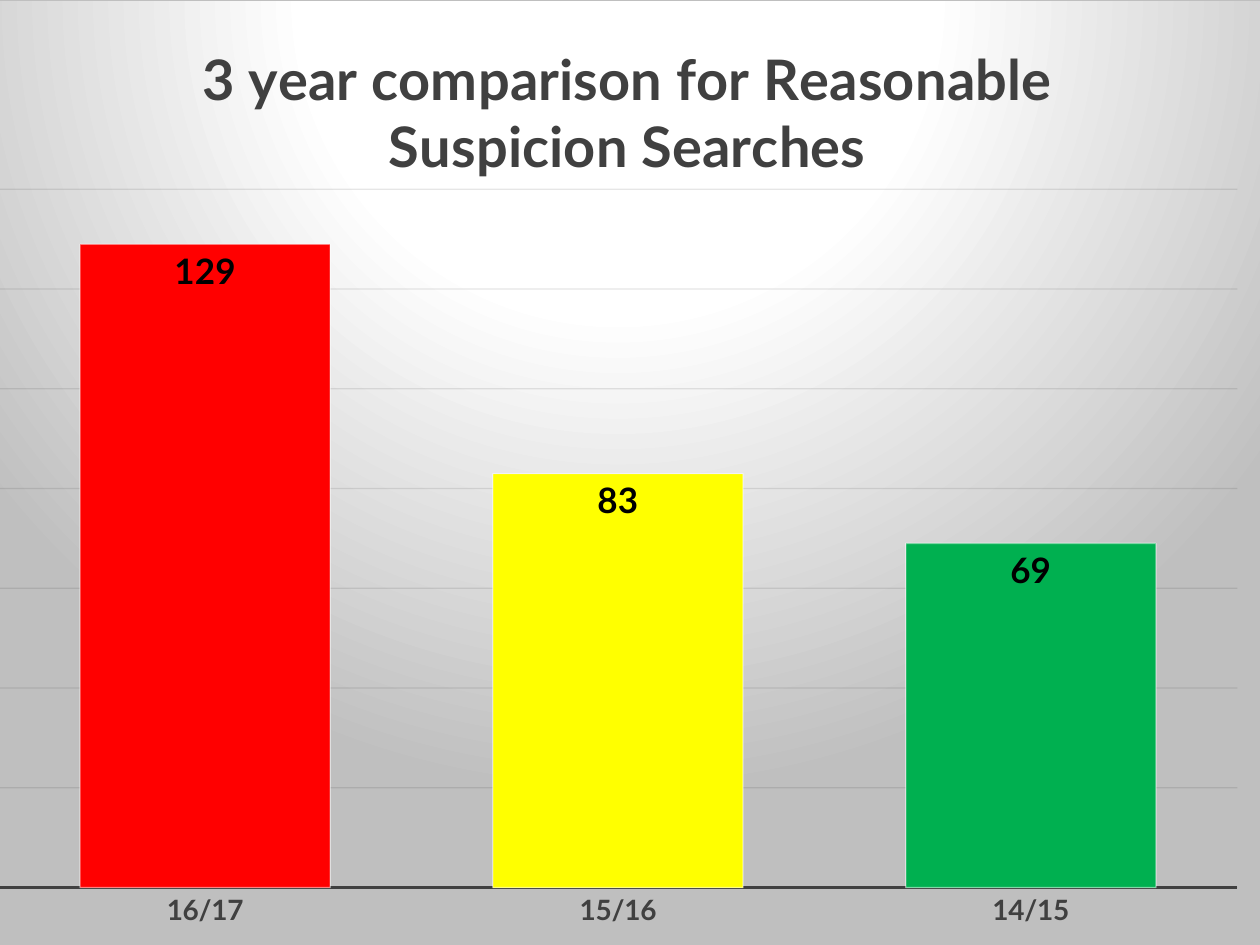
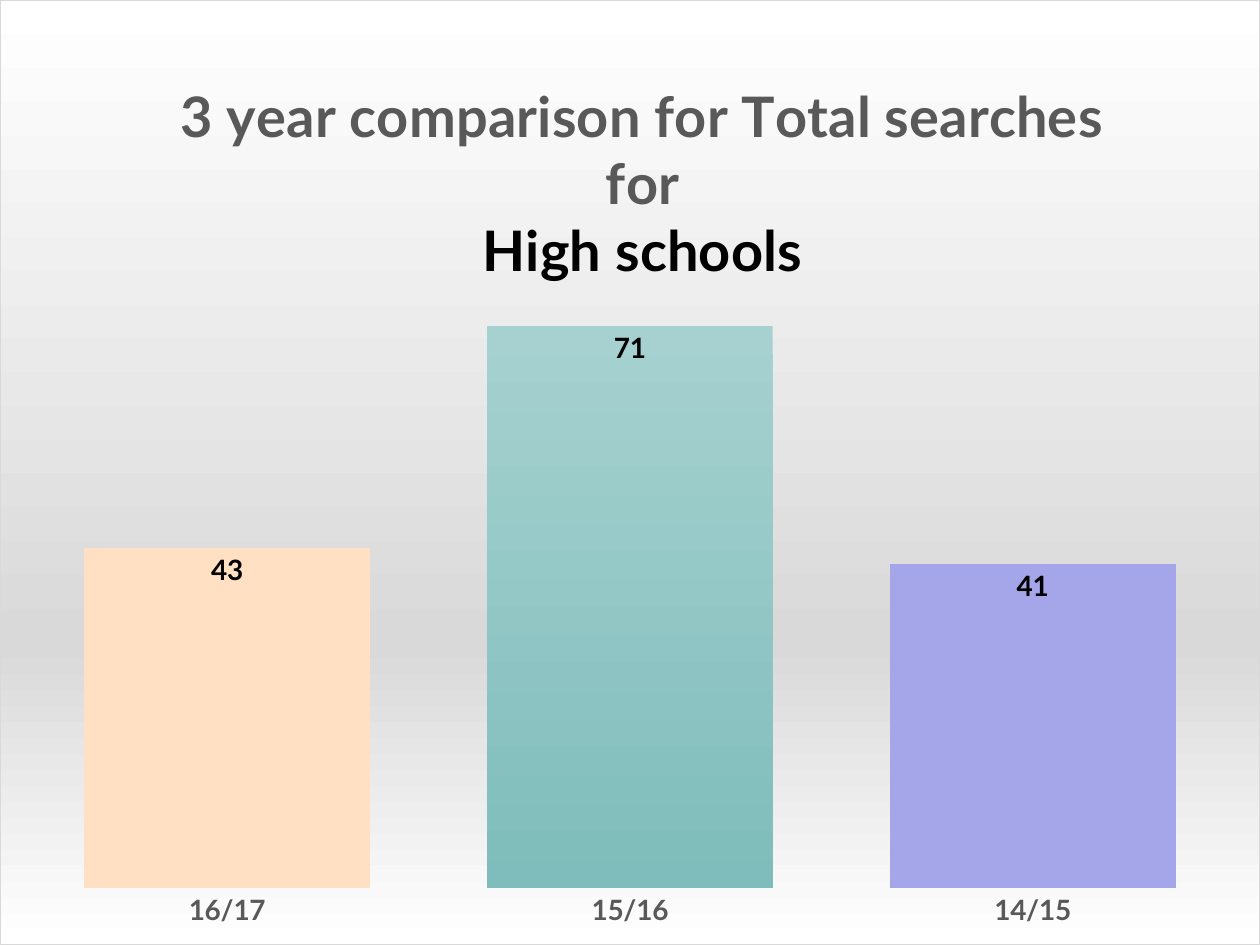
import pptx
import pptx.chart.data
import pptx.dml.color
import pptx.enum.chart
import pptx.oxml
import pptx.oxml.ns
import pptx.util

RGBColor = pptx.dml.color.RGBColor
Inches = pptx.util.Inches
Pt = pptx.util.Pt

FONT = "Lato"
BLACK = RGBColor(0x00, 0x00, 0x00)
WHITE = RGBColor(0xFF, 0xFF, 0xFF)
CHARCOAL = RGBColor(0x40, 0x40, 0x40)
SLATE = RGBColor(0x59, 0x59, 0x59)
SILVER = RGBColor(0xBF, 0xBF, 0xBF)
MIST = RGBColor(0xD9, 0xD9, 0xD9)
GRID_INK = RGBColor(0x0D, 0x0D, 0x0D)
RED = RGBColor(0xFF, 0x00, 0x00)
YELLOW = RGBColor(0xFF, 0xFF, 0x00)
GREEN = RGBColor(0x00, 0xB0, 0x50)
PEACH = RGBColor(0xFF, 0xE0, 0xC2)
TEAL_LIGHT = RGBColor(0xA6, 0xD1, 0xD0)
TEAL_DARK = RGBColor(0x7E, 0xBD, 0xBB)
LAVENDER = RGBColor(0xA5, 0xA5, 0xE9)

YEARS = ("16/17", "15/16", "14/15")
TITLE_SIZE = 32
SPOTLIGHT = ('<a:path path="circle"><a:fillToRect l="50000" t="-80000" '
             'r="50000" b="180000"/></a:path>')
DOWNWARD = '<a:lin ang="5400000" scaled="0"/>'


def style_font(font, size, color, bold=True):
    """Apply the deck typeface with a size, colour and weight."""
    font.name = FONT
    font.size = Pt(size)
    font.bold = bold
    font.color.rgb = color


def add_text(paragraph, text, **style):
    """Append a formatted run to a paragraph."""
    run = paragraph.add_run()
    run.text = text
    style_font(run.font, **style)


def style_line(line, color, width):
    """Give a line a solid colour and a width in points."""
    line.color.rgb = color
    line.width = Pt(width)


def set_opacity(chart, colors_path, percent):
    """Set the opacity of every colour found in the chart."""
    for color in chart.element.xpath(colors_path):
        alpha = pptx.oxml.parse_xml(
            f'<a:alpha {pptx.oxml.ns.nsdecls("a")} val="{percent * 1000}"/>')
        color.append(alpha)


def manual_layout(x, y, width=None, height=None):
    """Return a layout element in fractions of the chart."""
    target = '<c:layoutTarget val="inner"/>' if width else ""
    extent = f'<c:w val="{width}"/><c:h val="{height}"/>' if width else ""
    return pptx.oxml.parse_xml(
        f'<c:layout {pptx.oxml.ns.nsdecls("c")}><c:manualLayout>{target}'
        '<c:xMode val="edge"/><c:yMode val="edge"/>'
        f'<c:x val="{x}"/><c:y val="{y}"/>{extent}'
        '</c:manualLayout></c:layout>')


def fill_backdrop(chart, stops, direction, border):
    """Fill the chart area with a gradient inside a thin border."""
    marks = "".join(f'<a:gs pos="{position * 1000}"><a:srgbClr val="{color}"/></a:gs>'
                    for position, color in stops)
    backdrop = pptx.oxml.parse_xml(
        f'<c:spPr {pptx.oxml.ns.nsdecls("c", "a")}>'
        f'<a:gradFill><a:gsLst>{marks}</a:gsLst>{direction}</a:gradFill>'
        f'<a:ln w="{Pt(0.75)}"><a:solidFill><a:srgbClr val="{border}"/>'
        '</a:solidFill></a:ln></c:spPr>')
    chart.element.xpath("./c:txPr")[0].addprevious(backdrop)


def write_title(chart, lines, corner):
    """Write the title lines and place their top left corner."""
    frame = chart.chart_title.text_frame
    for number, (text, color) in enumerate(lines):
        paragraph = frame.add_paragraph() if number else frame.paragraphs[0]
        add_text(paragraph, text, size=TITLE_SIZE, color=color)
    for layout in chart.element.xpath("./c:chart/c:title/c:layout"):
        layout.getparent().remove(layout)
    chart.element.xpath("./c:chart/c:title/c:tx")[0].addnext(manual_layout(*corner))


def color_bars(bars, fills):
    """Fill each bar with one colour, or with a top and bottom pair."""
    for number, colors in enumerate(fills):
        fill = bars.points[number].format.fill
        if isinstance(colors, RGBColor):
            fill.solid()
            fill.fore_color.rgb = colors
        else:
            fill.gradient()
            fill.gradient_angle = 270
            for stop, color in zip(fill.gradient_stops, colors):
                stop.color.rgb = color


def add_year_chart(slide, box, counts, fills, gap, top_value, plot_box,
                   label_size, year_color):
    """Add a column chart of yearly counts in the given box."""
    yearly = pptx.chart.data.CategoryChartData()
    yearly.categories = YEARS
    yearly.add_series("Series 1", counts)
    chart = slide.shapes.add_chart(
        pptx.enum.chart.XL_CHART_TYPE.COLUMN_CLUSTERED,
        *(Inches(length) for length in box), yearly).chart
    style_font(chart.font, 10, BLACK, bold=False)
    chart.has_legend = False

    columns = chart.plots[0]
    columns.gap_width = gap
    columns.vary_by_categories = False
    columns.has_data_labels = True
    columns.data_labels.show_value = True
    columns.data_labels.position = pptx.enum.chart.XL_LABEL_POSITION.INSIDE_END
    style_font(columns.data_labels.font, label_size, BLACK)
    color_bars(columns.series[0], fills)

    years = chart.category_axis
    years.major_tick_mark = pptx.enum.chart.XL_TICK_MARK.NONE
    years.format.line.fill.background()
    style_font(years.tick_labels.font, 16, year_color)
    scale = chart.value_axis
    scale.minimum_scale = 0
    scale.maximum_scale = top_value
    scale.major_unit = 20
    scale.has_major_gridlines = False
    scale.visible = False

    plot_area = chart.element.xpath("./c:chart/c:plotArea")[0]
    for layout in plot_area.xpath("./c:layout"):
        plot_area.remove(layout)
    plot_area.insert(0, manual_layout(*plot_box))
    return chart


def build_suspicion_slide(slide, box):
    """Compare reasonable suspicion searches over three years."""
    chart = add_year_chart(
        slide, box, counts=(129, 83, 69), fills=(RED, YELLOW, GREEN), gap=65,
        top_value=140, plot_box=(0.02, 0.2, 0.96, 0.74), label_size=20,
        year_color=CHARCOAL)
    write_title(chart, [("3 year comparison for Reasonable Suspicion Searches", CHARCOAL)],
                corner=(0.17, 0.03))
    fill_backdrop(chart, [(0, WHITE), (39, WHITE), (100, SILVER)], SPOTLIGHT, SILVER)
    style_line(chart.category_axis.format.line, CHARCOAL, 1.5)
    chart.value_axis.has_major_gridlines = True
    style_line(chart.value_axis.major_gridlines.format.line, GRID_INK, 0.75)
    set_opacity(chart, ".//c:majorGridlines//a:srgbClr", 10)
    bars = chart.plots[0].series[0]
    for number in range(len(YEARS)):
        style_line(bars.points[number].format.line, WHITE, 0.75)
    set_opacity(chart, ".//c:dPt/c:spPr/a:ln//a:srgbClr", 50)


def build_high_school_slide(slide, box):
    """Compare total searches for high schools over three years."""
    chart = add_year_chart(
        slide, box, counts=(43, 71, 41),
        fills=(PEACH, (TEAL_LIGHT, TEAL_DARK), LAVENDER), gap=41,
        top_value=80, plot_box=(0.02, 0.27, 0.96, 0.67), label_size=16,
        year_color=SLATE)
    write_title(chart, [("3 year comparison for Total searches for", SLATE),
                        ("High schools", BLACK)], corner=(0.14, 0.08))
    fill_backdrop(chart, [(0, WHITE), (68, MIST), (100, WHITE)], DOWNWARD, MIST)


def main():
    """Build both comparison slides and save the deck."""
    deck = pptx.Presentation()
    deck.slide_width = Inches(10)
    deck.slide_height = Inches(7.5)
    blank = deck.slide_layouts[6]
    build_suspicion_slide(deck.slides.add_slide(blank), (-0.22, 0, 10.25, 7.5))
    build_high_school_slide(deck.slides.add_slide(blank), (0, 0, 10, 7.5))
    deck.save("out.pptx")


if __name__ == "__main__":
    main()
